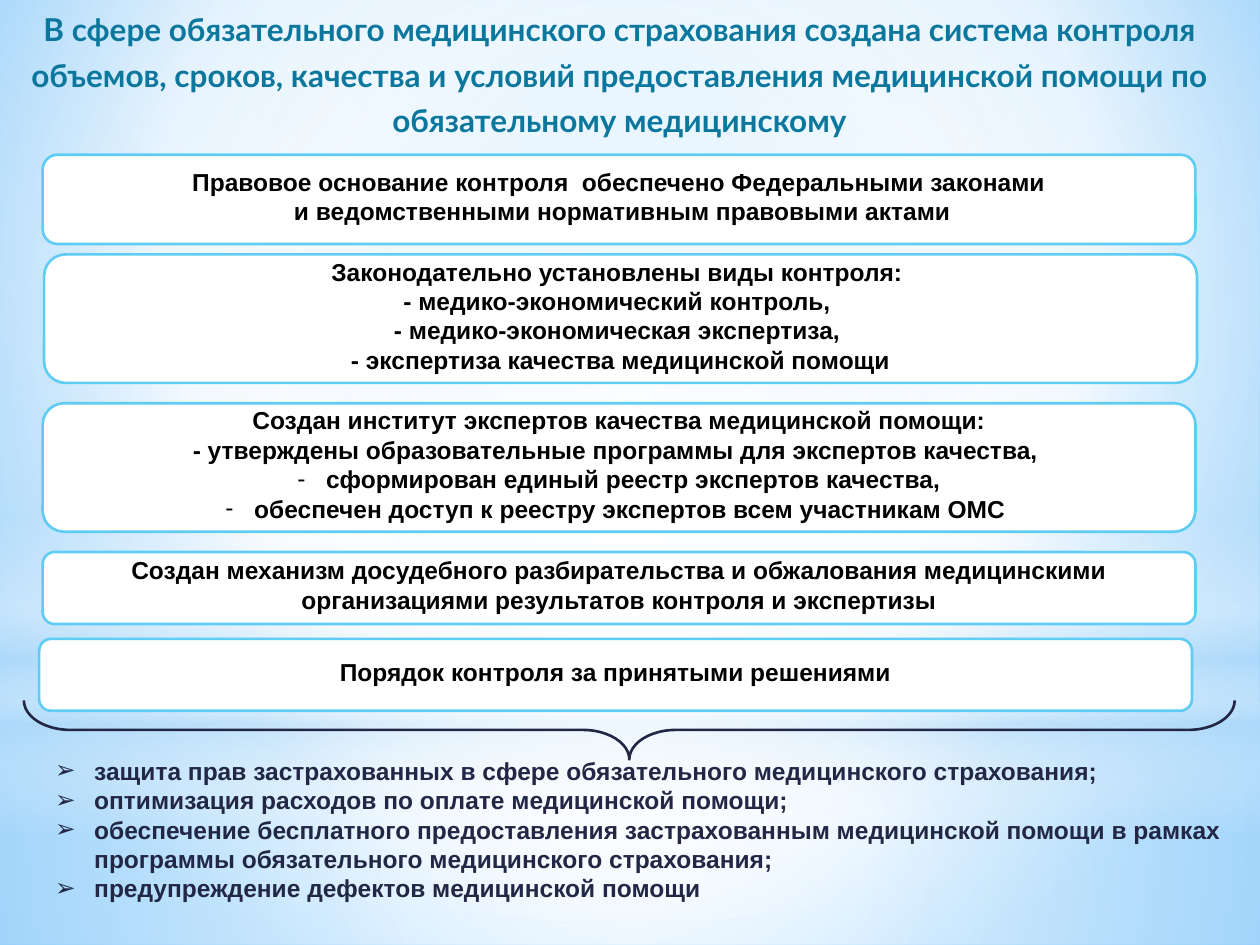
from lxml.etree import SubElement
from pptx import Presentation
from pptx.dml.color import RGBColor
from pptx.enum.shapes import MSO_SHAPE
from pptx.enum.text import MSO_ANCHOR, MSO_AUTO_SIZE, PP_ALIGN
from pptx.oxml.ns import qn
from pptx.util import Cm, Pt

TEAL = RGBColor(0x0C, 0x77, 0x9D)
SKY = RGBColor(0x5E, 0xCC, 0xF3)
NAVY = RGBColor(0x21, 0x27, 0x45)
BLACK = RGBColor(0, 0, 0)
WHITE = RGBColor(0xFF, 0xFF, 0xFF)
PALE = RGBColor(0xB4, 0xDC, 0xFA)
LIGHT_BLUE = RGBColor(0x9E, 0xD5, 0xFF)
BLUE = RGBColor(0x5B, 0xB9, 0xFF)

TITLE = (
    "В сфере обязательного медицинского страхования создана система контроля "
    "объемов, сроков, качества и условий предоставления медицинской помощи по "
    "обязательному медицинскому"
)
BACKGROUND_STOPS = [(0, LIGHT_BLUE, 100), (60, WHITE, 100), (100, BLUE, 100)]
BACKGROUND_FOCUS = (20, 10, 20, 60)
CENTRE = (50, 50, 50, 50)
GLOWS = [
    (MSO_SHAPE.RECTANGLE, 14.17, 4.88, CENTRE,
     [(0, WHITE, 91), (37, WHITE, 76), (100, PALE, 79)]),
    (MSO_SHAPE.RECTANGLE, 0, 14.17, CENTRE,
     [(0, WHITE, 89), (48, WHITE, 62), (100, PALE, 79)]),
    (MSO_SHAPE.RECTANGLE, 10.46, 6.35, None,
     [(0, WHITE, 0), (29, WHITE, 30), (45, PALE, 40),
      (55, WHITE, 26), (65, PALE, 60), (100, WHITE, 0)]),
    (MSO_SHAPE.OVAL, 4.45, 14.17, CENTRE,
     [(0, WHITE, 100), (56, WHITE, 0)]),
]
BOX_WIDTH = 23.24
BOXES = [
    (0.86, 3.12, 1.8, [
        ("", "Правовое основание контроля  обеспечено Федеральными законами"),
        ("", " и ведомственными нормативным правовыми актами"),
    ]),
    (0.89, 5.13, 2.59, [
        ("", "Законодательно установлены виды контроля: "),
        ("", "- медико-экономический контроль, "),
        ("", "- медико-экономическая экспертиза, "),
        ("", "- экспертиза качества медицинской помощи"),
    ]),
    (0.86, 8.13, 2.59, [
        ("", "Создан институт экспертов качества медицинской помощи:"),
        ("", "- утверждены образовательные программы для экспертов качества, "),
        ("-", "сформирован единый реестр экспертов качества,"),
        ("-", "обеспечен доступ к реестру экспертов всем участникам ОМС "),
    ]),
    (0.86, 11.13, 1.45, [
        ("", "Создан механизм досудебного разбирательства и обжалования "
             "медицинскими организациями результатов контроля и экспертизы"),
    ]),
    (0.79, 12.88, 1.45, [("", "Порядок контроля за принятыми решениями")]),
]
RESULTS = [
    ("➢", "защита прав застрахованных в сфере обязательного медицинского страхования;"),
    ("➢", "оптимизация расходов по оплате медицинской помощи;"),
    ("➢", "обеспечение бесплатного предоставления застрахованным медицинской "
          "помощи в рамках программы обязательного медицинского страхования;"),
    ("➢", "предупреждение дефектов медицинской помощи"),
]


def set_gradient(fill, element, stops, focus):
    fill.gradient()
    gradient = element.find(".//" + qn("a:gradFill"))
    for child in list(gradient):
        gradient.remove(child)
    stop_list = SubElement(gradient, qn("a:gsLst"))
    for position, color, opacity in stops:
        stop = SubElement(stop_list, qn("a:gs"), pos=str(position * 1000))
        color_element = SubElement(stop, qn("a:srgbClr"), val=str(color))
        if opacity < 100:
            SubElement(color_element, qn("a:alpha"), val=str(opacity * 1000))
    if focus:
        radial = SubElement(gradient, qn("a:path"), path="circle")
        sides = {side: str(value * 1000) for side, value in zip("ltrb", focus)}
        SubElement(radial, qn("a:fillToRect"), **sides)
    else:
        SubElement(gradient, qn("a:lin"), ang="5400000", scaled="0")


def add_run(paragraph, text, font_name, size, color):
    run = paragraph.add_run()
    run.text = text
    run.font.name = font_name
    run.font.size = Pt(size)
    run.font.bold = True
    run.font.color.rgb = color


def set_bullet(paragraph, character, indent):
    properties = paragraph._p.get_or_add_pPr()
    properties.set("marL", str(Cm(indent)))
    properties.set("indent", str(-Cm(indent)))
    SubElement(properties, qn("a:buFont"), typeface="Arial")
    SubElement(properties, qn("a:buChar"), char=character)


def write_lines(frame, lines, color, alignment, indent):
    frame.word_wrap = True
    for index, (bullet, text) in enumerate(lines):
        paragraph = frame.add_paragraph() if index else frame.paragraphs[0]
        paragraph.alignment = alignment
        if bullet:
            set_bullet(paragraph, bullet, indent)
        add_run(paragraph, text, "Arial", 14, color)


def add_plain_shape(slide, kind, left, top, width, height):
    shape = slide.shapes.add_shape(kind, Cm(left), Cm(top), Cm(width), Cm(height))
    shape.shadow.inherit = False
    return shape


def add_backdrop(slide):
    set_gradient(slide.background.fill, slide.element, BACKGROUND_STOPS, BACKGROUND_FOCUS)
    for kind, top, height, focus, stops in GLOWS:
        glow = add_plain_shape(slide, kind, 0, top, 25.4, height)
        glow.line.fill.background()
        set_gradient(glow.fill, glow.element, stops, focus)


def format_title(slide):
    title = slide.shapes.title
    title.left, title.top, title.width, title.height = Cm(0.08), Cm(0.53), Cm(24.82), Cm(1.8)
    frame = title.text_frame
    frame.word_wrap = True
    frame.auto_size = MSO_AUTO_SIZE.NONE
    frame.vertical_anchor = MSO_ANCHOR.MIDDLE
    paragraph = frame.paragraphs[0]
    paragraph.alignment = PP_ALIGN.CENTER
    paragraph.line_spacing = 1.2
    add_run(paragraph, TITLE, "Lato", 18, TEAL)


def add_box(slide, left, top, height, lines):
    box = add_plain_shape(slide, MSO_SHAPE.ROUNDED_RECTANGLE, left, top, BOX_WIDTH, height)
    box.fill.solid()
    box.fill.fore_color.rgb = WHITE
    box.line.color.rgb = SKY
    box.line.width = Pt(1.5)
    frame = box.text_frame
    frame.margin_top, frame.margin_bottom = Cm(0), Cm(0.13)
    frame.vertical_anchor = MSO_ANCHOR.MIDDLE
    write_lines(frame, lines, BLACK, PP_ALIGN.CENTER, 0.58)


def add_brace(slide):
    brace = add_plain_shape(slide, MSO_SHAPE.RIGHT_BRACE, 12.09, 2.51, 1.19, 24.41)
    brace.rotation = 90
    brace.adjustments[0] = 0.79
    brace.adjustments[1] = 0.5
    brace.fill.background()
    brace.line.color.rgb = NAVY
    brace.line.width = Pt(1.5)


def main():
    presentation = Presentation()
    presentation.slide_width, presentation.slide_height = Cm(25.4), Cm(19.05)
    slide = presentation.slides.add_slide(presentation.slide_layouts[5])
    add_backdrop(slide)
    format_title(slide)
    title_element = slide.shapes.title.element
    title_element.getparent().append(title_element)
    for box in BOXES:
        add_box(slide, *box)
    add_brace(slide)
    results = slide.shapes.add_textbox(Cm(0.86), Cm(15.11), Cm(24.05), Cm(3.25))
    write_lines(results.text_frame, RESULTS, NAVY, PP_ALIGN.LEFT, 0.79)
    presentation.save("out.pptx")


if __name__ == "__main__":
    main()
